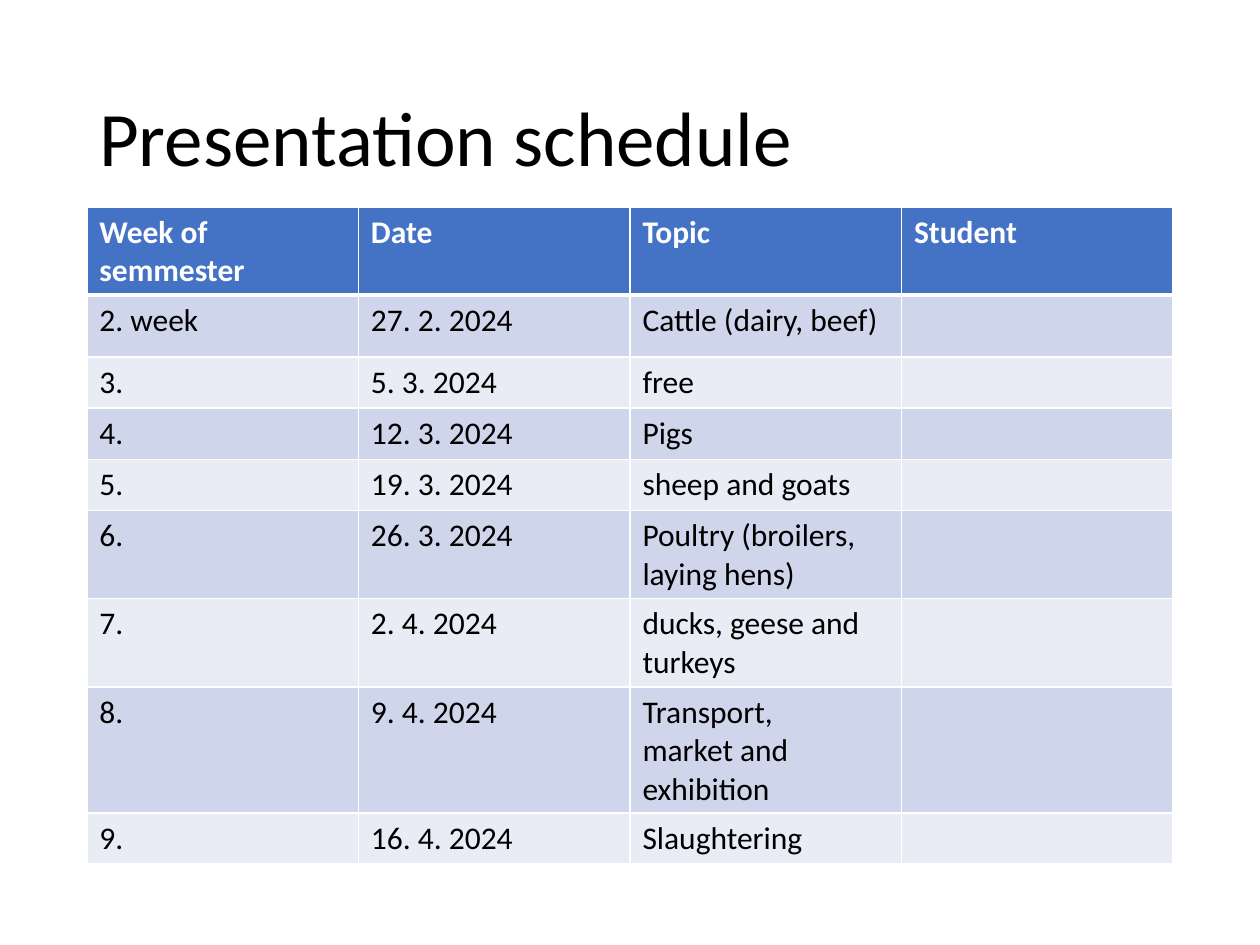
from dataclasses import dataclass

import pptx
import pptx.dml.color
import pptx.enum.text
import pptx.oxml
import pptx.oxml.ns
import pptx.util
from pptx.dml.color import RGBColor
from pptx.util import Cm, Pt

BLACK = RGBColor(0x00, 0x00, 0x00)
WHITE = RGBColor(0xFF, 0xFF, 0xFF)
HEADER_BLUE = RGBColor(0x44, 0x72, 0xC4)
BAND_DARK = RGBColor(0xCF, 0xD5, 0xEA)
BAND_LIGHT = RGBColor(0xE9, 0xEB, 0xF5)

LEFT = Cm(1.75)
CONTENT_WIDTH = Cm(21.9)
ROW_HEIGHT = Cm(1.03)
FIRST_WEEK_HEIGHT = Cm(1.25)
THIN, THICK = Pt(1), Pt(3)

TITLE_FORMAT = {"name": "Calibri", "size": Pt(44)}
HEADER_FORMAT = {"name": "Calibri", "size": Pt(18), "bold": True}
BODY_FORMAT = {"name": "Calibri", "size": Pt(18), "bold": False}


@dataclass(frozen=True)
class Session:
    week: str
    date: str
    topic: str
    student: str = ""

    def values(self) -> tuple[str, ...]:
        return self.week, self.date, self.topic, self.student


HEADINGS = ("Week of semmester", "Date", "Topic", "Student")
SESSIONS = (
    Session("2. week", "27. 2. 2024", "Cattle (dairy, beef)"),
    Session("3.", "5. 3. 2024", "free"),
    Session("4.", "12. 3. 2024", "Pigs"),
    Session("5.", "19. 3. 2024", "sheep and goats"),
    Session("6.", "26. 3. 2024", "Poultry (broilers, laying hens)"),
    Session("7.", "2. 4. 2024", "ducks, geese and turkeys"),
    Session("8.", "9. 4. 2024", "Transport,\nmarket and exhibition"),
    Session("9.", "16. 4. 2024", "Slaughtering"),
)


def write_text(text_frame, text: str, font_format: dict, color: RGBColor) -> None:
    text_frame.text = text
    for paragraph in text_frame.paragraphs:
        for run in paragraph.runs:
            for attribute, value in font_format.items():
                setattr(run.font, attribute, value)
            run.font.color.rgb = color


def set_borders(cell, top: int, bottom: int) -> None:
    """Draw white lines on all four sides; call before setting the cell fill."""
    properties = cell._tc.get_or_add_tcPr()
    for side, width in (("L", THIN), ("R", THIN), ("T", top), ("B", bottom)):
        properties.append(pptx.oxml.parse_xml(
            f'<a:ln{side} {pptx.oxml.ns.nsdecls("a")} w="{width}">'
            f'<a:solidFill><a:srgbClr val="{WHITE}"/></a:solidFill></a:ln{side}>'
        ))


def add_title(slide, text: str) -> None:
    text_frame = slide.shapes.add_textbox(
        LEFT, Cm(1.01), CONTENT_WIDTH, Cm(3.68)).text_frame
    text_frame.word_wrap = True
    text_frame.vertical_anchor = pptx.enum.text.MSO_ANCHOR.MIDDLE
    write_text(text_frame, text, TITLE_FORMAT, BLACK)
    text_frame.paragraphs[0].line_spacing = 0.9


def add_schedule(slide, sessions: tuple[Session, ...]) -> None:
    rows = [HEADINGS, *(session.values() for session in sessions)]
    table = slide.shapes.add_table(
        len(rows), len(HEADINGS), LEFT, Cm(4.17),
        CONTENT_WIDTH, ROW_HEIGHT * len(rows)).table
    for row_index, values in enumerate(rows):
        is_header = row_index == 0
        table.rows[row_index].height = (
            FIRST_WEEK_HEIGHT if row_index == 1 else ROW_HEIGHT)
        if is_header:
            fill, font_format, color = HEADER_BLUE, HEADER_FORMAT, WHITE
        else:
            fill = BAND_DARK if row_index % 2 else BAND_LIGHT
            font_format, color = BODY_FORMAT, BLACK
        for column_index, value in enumerate(values):
            cell = table.cell(row_index, column_index)
            write_text(cell.text_frame, value, font_format, color)
            set_borders(cell, THICK if row_index == 1 else THIN,
                        THICK if is_header else THIN)
            cell.fill.solid()
            cell.fill.fore_color.rgb = fill


def main() -> None:
    presentation = pptx.Presentation()
    presentation.slide_width = Cm(25.4)
    presentation.slide_height = Cm(19.05)
    slide = presentation.slides.add_slide(presentation.slide_layouts[6])
    add_title(slide, "Presentation schedule")
    add_schedule(slide, SESSIONS)
    presentation.save("out.pptx")


if __name__ == "__main__":
    main()
